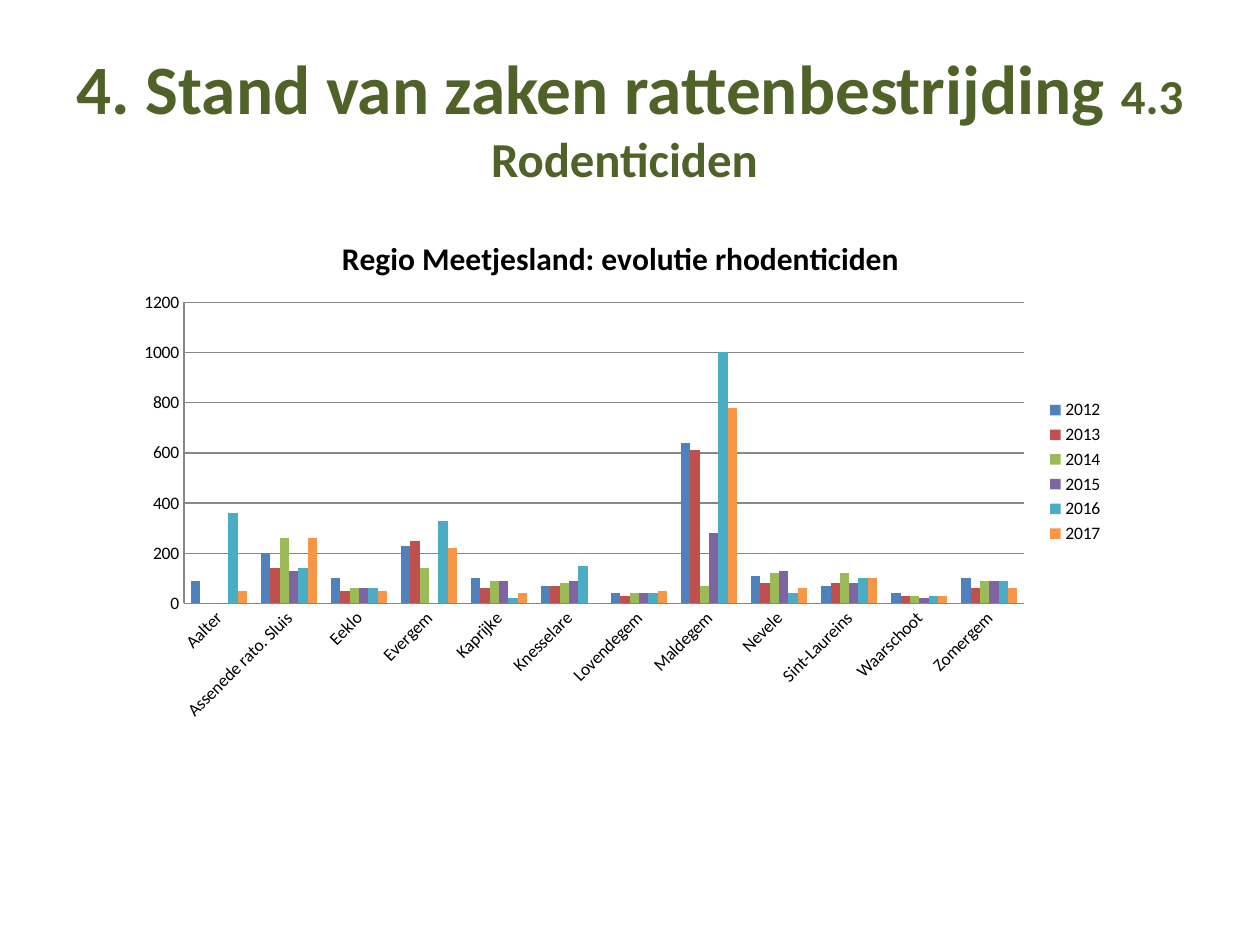
from pptx import Presentation
from pptx.chart.data import CategoryChartData
from pptx.dml.color import RGBColor
from pptx.enum.chart import XL_CHART_TYPE, XL_LEGEND_POSITION, XL_TICK_MARK
from pptx.enum.text import MSO_ANCHOR, MSO_AUTO_SIZE, PP_ALIGN
from pptx.oxml import parse_xml
from pptx.oxml.ns import nsdecls
from pptx.util import Inches, Pt

# Content
HEADING = "4. Stand van zaken rattenbestrijding "
SUBHEADING = "4.3 Rodenticiden "
CHART_TITLE = "Regio Meetjesland: evolutie rhodenticiden"
MUNICIPALITIES = [
    "Aalter", "Assenede rato. Sluis", "Eeklo", "Evergem", "Kaprijke", "Knesselare",
    "Lovendegem", "Maldegem", "Nevele", "Sint-Laureins", "Waarschoot", "Zomergem",
]
USAGE_BY_YEAR = {
    "2012": [90, 200, 100, 230, 100, 70, 40, 640, 110, 70, 40, 100],
    "2013": [None, 140, 50, 250, 60, 70, 30, 610, 80, 80, 30, 60],
    "2014": [None, 260, 60, 140, 90, 80, 40, 70, 120, 120, 30, 90],
    "2015": [0, 130, 60, 0, 90, 90, 40, 280, 130, 80, 20, 90],
    "2016": [360, 140, 60, 330, 20, 150, 40, 1000, 40, 100, 30, 90],
    "2017": [50, 260, 50, 220, 40, 0, 50, 780, 60, 100, 30, 60],
}

THEME = {
    "font": "Calibri",
    "heading": "4F6228",
    "text": "000000",
    "line": "878787",
    "years": ["4F81BD", "C0504D", "9BBB59", "8064A2", "4BACC6", "F79646"],
    "heading_size": 39.6,
    "subheading_size": 27.9,
    "chart_title_size": 18,
    "chart_size": 10,
}
# Chart frame on the slide, and plot area within that frame, in inches
CHART_FRAME = {"x": 0.99, "y": 1.7, "w": 7.87, "h": 4.09}
PLOT_AREA = {"x": 0.47, "y": 0.7, "w": 6.67, "h": 2.39}


def style_font(font, size, color, bold=False):
    font.name = THEME["font"]
    font.size = Pt(size)
    font.bold = bold
    font.color.rgb = RGBColor.from_string(color)


def style_line(line):
    line.color.rgb = RGBColor.from_string(THEME["line"])
    line.width = Pt(0.75)


def add_heading(slide):
    title = slide.shapes.title
    title.left, title.top = Inches(0.5), Inches(0.3)
    title.width, title.height = Inches(9), Inches(1.25)
    frame = title.text_frame
    frame.word_wrap = True
    frame.auto_size = MSO_AUTO_SIZE.NONE
    frame.vertical_anchor = MSO_ANCHOR.MIDDLE
    frame.margin_left = frame.margin_right = Inches(0.05)
    paragraph = frame.paragraphs[0]
    paragraph.alignment = PP_ALIGN.CENTER
    for text, size in ((HEADING, THEME["heading_size"]),
                       (SUBHEADING, THEME["subheading_size"])):
        run = paragraph.add_run()
        run.text = text
        style_font(run.font, size, THEME["heading"], bold=True)


def fix_plot_area(chart):
    shares = {
        side: length / CHART_FRAME["w" if side in "xw" else "h"]
        for side, length in PLOT_AREA.items()
    }
    sides = "".join(f'<c:{side} val="{share:.4f}"/>' for side, share in shares.items())
    layout = parse_xml(
        f'<c:layout {nsdecls("c")}><c:manualLayout><c:layoutTarget val="inner"/>'
        f'<c:xMode val="edge"/><c:yMode val="edge"/>{sides}</c:manualLayout></c:layout>')
    plot_area = chart._chartSpace.xpath("c:chart/c:plotArea")[0]
    for automatic_layout in plot_area.xpath("c:layout"):
        plot_area.remove(automatic_layout)
    plot_area.insert(0, layout)


def add_usage_chart(slide):
    usage = CategoryChartData(number_format="0")
    usage.categories = MUNICIPALITIES
    for year, values in USAGE_BY_YEAR.items():
        usage.add_series(year, values)
    frame = [Inches(length) for length in CHART_FRAME.values()]
    chart = slide.shapes.add_chart(XL_CHART_TYPE.COLUMN_CLUSTERED, *frame, usage).chart
    style_font(chart.font, THEME["chart_size"], THEME["text"])

    # Title and legend
    chart.has_title = True
    chart_title = chart.chart_title
    chart_title.include_in_layout = False
    chart_title.text_frame.text = CHART_TITLE
    style_font(chart_title.text_frame.paragraphs[0].runs[0].font,
               THEME["chart_title_size"], THEME["text"], bold=True)
    chart.has_legend = True
    chart.legend.position = XL_LEGEND_POSITION.RIGHT
    chart.legend.include_in_layout = False

    # Columns
    columns = chart.plots[0]
    columns.gap_width = 150
    columns.overlap = 0
    columns.vary_by_categories = False
    for series, color in zip(columns.series, THEME["years"]):
        series.format.fill.solid()
        series.format.fill.fore_color.rgb = RGBColor.from_string(color)

    # Axes
    for axis in (chart.category_axis, chart.value_axis):
        axis.major_tick_mark = axis.minor_tick_mark = XL_TICK_MARK.NONE
        style_line(axis.format.line)
        style_font(axis.tick_labels.font, THEME["chart_size"], THEME["text"])
    for label_body in chart.category_axis._element.xpath("c:txPr/a:bodyPr"):
        label_body.set("rot", "-2700000")
    amounts = chart.value_axis
    amounts.minimum_scale, amounts.maximum_scale, amounts.major_unit = 0, 1200, 200
    amounts.tick_labels.number_format = "0"
    amounts.tick_labels.number_format_is_linked = False
    amounts.has_major_gridlines = True
    style_line(amounts.major_gridlines.format.line)

    fix_plot_area(chart)


def main():
    presentation = Presentation()
    presentation.slide_width, presentation.slide_height = Inches(10), Inches(7.5)
    slide = presentation.slides.add_slide(presentation.slide_layouts.get_by_name("Title Only"))
    add_heading(slide)
    add_usage_chart(slide)
    presentation.save("out.pptx")


if __name__ == "__main__":
    main()
